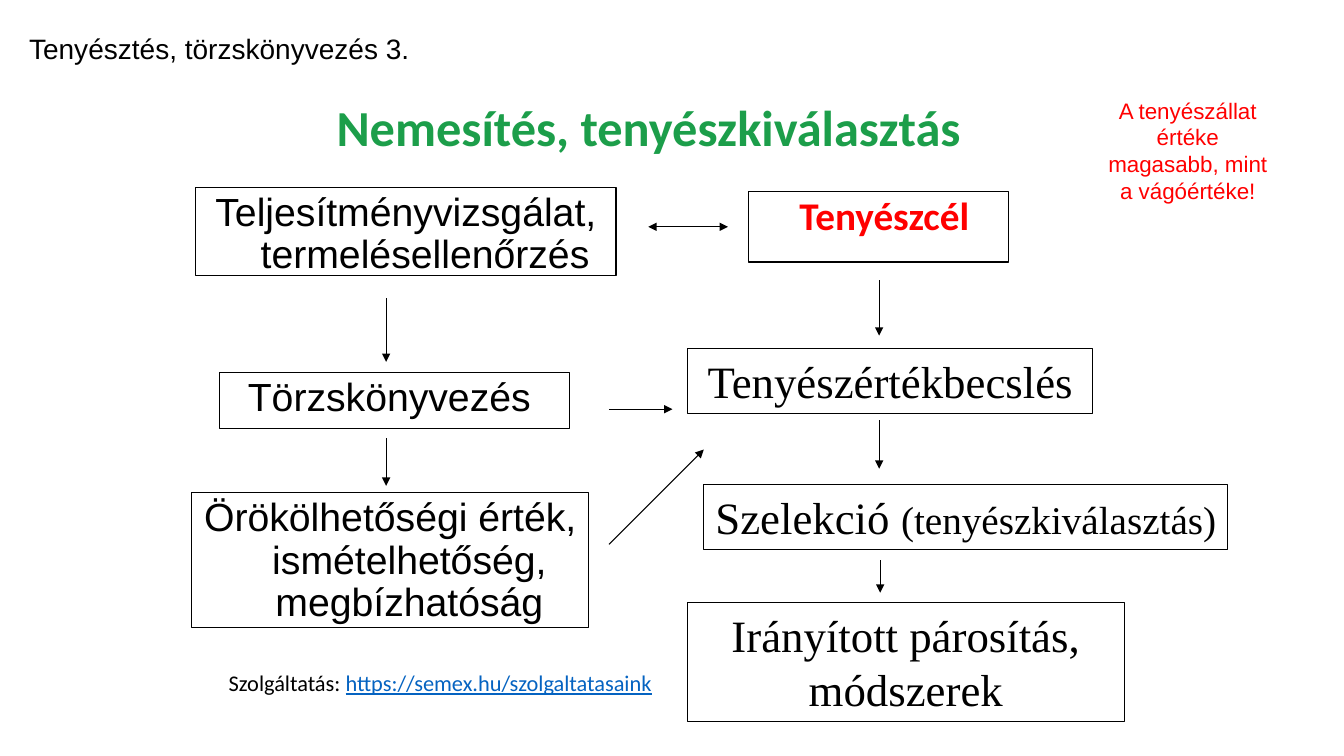
from lxml import etree
from pptx import Presentation
from pptx.dml.color import RGBColor
from pptx.enum.shapes import MSO_CONNECTOR, MSO_SHAPE
from pptx.enum.text import MSO_ANCHOR, PP_ALIGN
from pptx.oxml.ns import qn
from pptx.util import Inches, Pt

BLACK = RGBColor(0x00, 0x00, 0x00)
RED = RGBColor(0xFF, 0x00, 0x00)
GREEN = RGBColor(0x1C, 0x9E, 0x4A)
LINK_BLUE = RGBColor(0x05, 0x63, 0xC1)
CENTER, LEFT = PP_ALIGN.CENTER, PP_ALIGN.LEFT
TOP, MIDDLE = MSO_ANCHOR.TOP, MSO_ANCHOR.MIDDLE
RECTANGLE = MSO_SHAPE.RECTANGLE
STRAIGHT = MSO_CONNECTOR.STRAIGHT

# Styles: font, size, colour, bold, underline
TITLE = ("Calibri", 36, GREEN, True, False)
GOAL = ("Calibri", 28, RED, True, False)
RECORD = ("Arial", 28, BLACK, False, False)
BREEDING = ("Times New Roman", 32, BLACK, False, False)
BREEDING_SMALL = ("Times New Roman", 28, BLACK, False, False)
HEADER = ("Arial", 20, BLACK, False, False)
REMARK = ("Arial", 16, RED, False, False)
SERVICE = ("Calibri", 16, BLACK, False, False)
LINK = ("Calibri", 16, LINK_BLUE, False, True)

# Left, top, width, height; runs; left margin and line spacing
STEPS = [
    ((7.42, 1.9, 2.58, 0.7), [("Tenyészcél", GOAL)], 0.5, 0.9),
    ((6.82, 3.46, 4.02, 0.64), [("Tenyészértékbecslés", BREEDING)], 0, 1),
    ((6.98, 4.81, 5.2, 0.64),
     [("Szelekció ", BREEDING), ("(tenyészkiválasztás)", BREEDING_SMALL)], 0, 1),
    ((6.82, 5.98, 4.33, 1.18), [("Irányított párosítás, módszerek", BREEDING)], 0, 1),
    ((1.94, 1.86, 4.17, 0.87),
     [("Teljesítményvizsgálat, termelésellenőrzés", RECORD)], 0.38, 0.9),
    ((2.18, 3.7, 3.47, 0.55), [("Törzskönyvezés ", RECORD)], 0.38, 0.9),
    ((1.9, 4.89, 3.94, 1.34),
     [("Örökölhetőségi érték, ismételhetőség, megbízhatóság", RECORD)], 0.38, 0.9),
]
HANGING = -0.38

# Left, top, width, height; runs; alignment, anchor, wrap, line spacing
LABELS = [
    ((3.24, 0.67, 8.5, 1.25), [("Nemesítés, tenyészkiválasztás", TITLE)],
     LEFT, MIDDLE, True, 0.9),
    ((0.19, 0.26, 4.03, 0.44), [("Tenyésztés, törzskönyvezés 3.", HEADER)],
     LEFT, TOP, False, 1),
    ((10.84, 0.91, 1.88, 1.18),
     [("A tenyészállat értéke magasabb, mint a vágóértéke!", REMARK)],
     CENTER, TOP, True, 1),
    ((2.17, 6.57, 4.5, 0.38),
     [("Szolgáltatás: ", SERVICE), ("https://semex.hu/szolgaltatasaink", LINK)],
     LEFT, TOP, False, 1.07),
]

# Start x, start y, end x, end y; arrowheads
ONE_WAY, TWO_WAY = ("tailEnd",), ("headEnd", "tailEnd")
ARROWS = [
    ((6.43, 2.25, 7.22, 2.25), TWO_WAY),
    ((8.72, 2.78, 8.72, 3.33), ONE_WAY),
    ((8.72, 4.17, 8.72, 4.65), ONE_WAY),
    ((8.73, 5.56, 8.73, 5.88), ONE_WAY),
    ((3.83, 2.96, 3.83, 3.59), ONE_WAY),
    ((3.83, 4.35, 3.83, 4.82), ONE_WAY),
    ((6.04, 4.06, 6.67, 4.06), ONE_WAY),
    ((6.04, 5.4, 6.98, 4.46), ONE_WAY),
]


def write(box, spans, align, anchor, wrap, spacing):
    frame = box.text_frame
    frame.word_wrap = wrap
    frame.vertical_anchor = anchor
    para = frame.paragraphs[0]
    para.alignment = align
    para.line_spacing = spacing
    for text, (font, size, colour, bold, underline) in spans:
        span = para.add_run()
        span.text = text
        span.font.name = font
        span.font.size = Pt(size)
        span.font.color.rgb = colour
        span.font.bold = bold
        span.font.underline = underline
    return para


def add_step(page, area, spans, margin, spacing):
    box = page.shapes.add_shape(RECTANGLE, *map(Inches, area))
    box.shadow.inherit = False
    box.fill.background()
    box.line.color.rgb = BLACK
    box.line.width = Pt(0.75)
    para = write(box, spans, CENTER, TOP, True, spacing)
    if margin:
        properties = para._p.get_or_add_pPr()
        properties.set("marL", str(Inches(margin)))
        properties.set("indent", str(Inches(HANGING)))


def add_label(page, area, spans, *layout):
    write(page.shapes.add_textbox(*map(Inches, area)), spans, *layout)


def add_arrow(page, ends, heads):
    arrow = page.shapes.add_connector(STRAIGHT, *map(Inches, ends))
    arrow.line.color.rgb = BLACK
    arrow.line.width = Pt(0.75)
    outline = arrow.line._get_or_add_ln()
    for head in heads:
        etree.SubElement(outline, qn(f"a:{head}"), type="triangle")
    etree.SubElement(arrow._element.spPr, qn("a:effectLst"))


def main():
    deck = Presentation()
    deck.slide_width, deck.slide_height = Inches(13.33), Inches(7.5)
    page = deck.slides.add_slide(deck.slide_layouts[6])
    for label in LABELS:
        add_label(page, *label)
    for step in STEPS:
        add_step(page, *step)
    for arrow in ARROWS:
        add_arrow(page, *arrow)
    deck.save("out.pptx")


if __name__ == "__main__":
    main()
